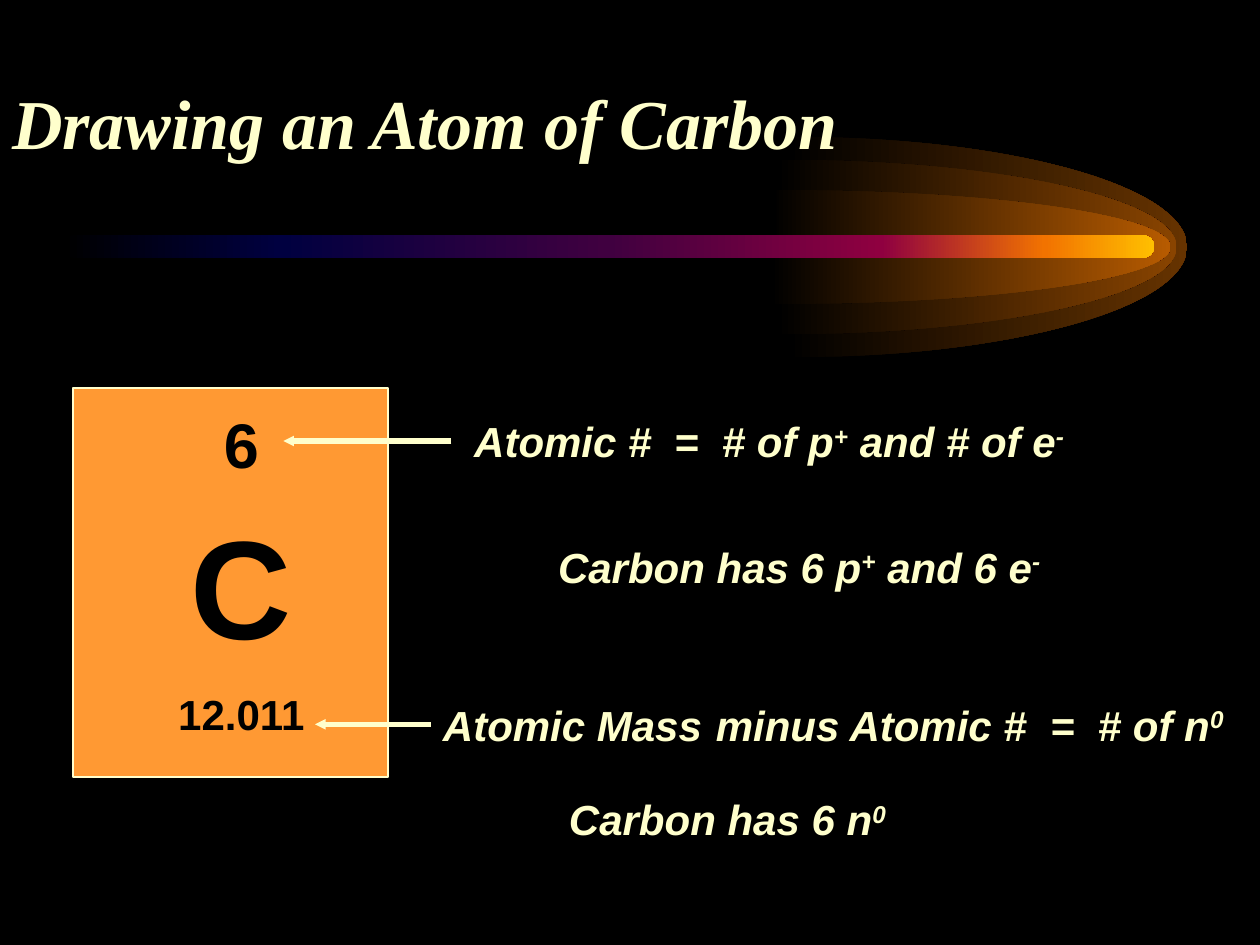
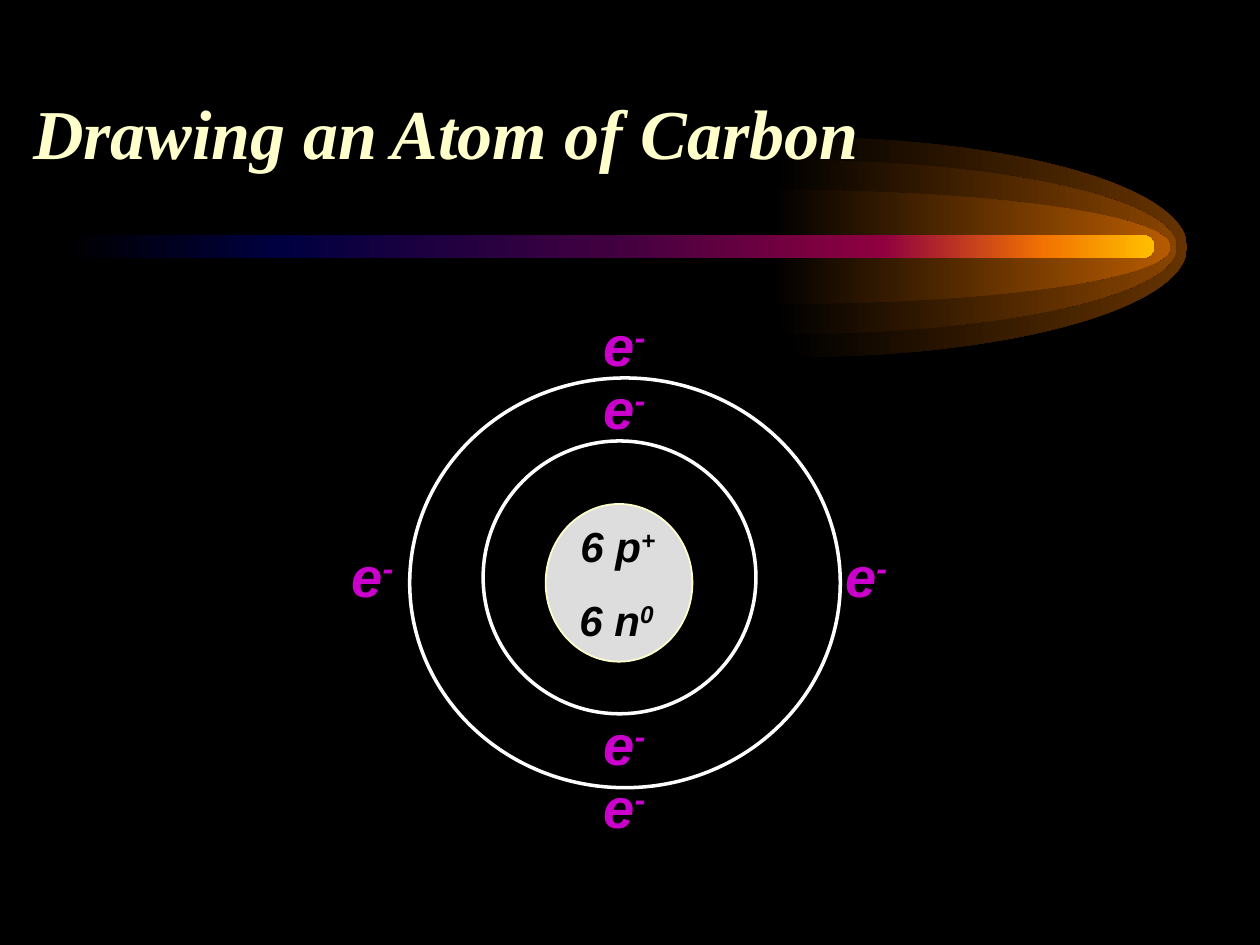
from dataclasses import dataclass

from lxml.etree import SubElement
from pptx import Presentation
from pptx.dml.color import RGBColor
from pptx.enum.shapes import MSO_CONNECTOR, MSO_SHAPE
from pptx.enum.text import MSO_AUTO_SIZE, PP_ALIGN
from pptx.oxml.ns import qn
from pptx.util import Cm, Pt


@dataclass(frozen=True)
class Theme:
    background: str = "000000"
    cream: str = "FFFFCC"
    ink: str = "000000"
    tile: str = "FF9933"
    nucleus: str = "DDDDDD"
    orbit: str = "FFFFFF"
    electron: str = "CC00CC"
    glows: tuple = ("663300", "894400", "B75B00")
    tail_stops: tuple = ((0, "000000"), (20, "000040"), (50, "400040"),
                         (75, "8F0040"), (90, "F27300"), (100, "FFBF00"))
    title_font: str = "Times New Roman"
    body_font: str = "Arial"
    title_size: int = 40
    body_size: int = 24
    electron_size: int = 32
    number_size: int = 36
    symbol_size: int = 80


@dataclass(frozen=True)
class Span:
    text: str
    raised: bool = False


PLUS, MINUS, ZERO = (Span(sign, raised=True) for sign in "+-0")


class SlideBuilder:
    def __init__(self, deck, theme):
        self.deck = deck
        self.theme = theme
        self.page = None

    def start_page(self, title, left, top):
        self.page = self.deck.slides.add_slide(self.deck.slide_layouts[6])
        fill = self.page.background.fill
        fill.solid()
        fill.fore_color.rgb = RGBColor.from_string(self.theme.background)
        self.comet()
        self.text(left, top, 17.58, 1.96, [[Span(title)]],
                  size=self.theme.title_size, font=self.theme.title_font)

    def comet(self):
        """Three nested half-ellipse glows with a glowing tail across them."""
        centers = (15.98, 15.77, 15.65)
        heights = (2.22, 1.76, 1.15)
        for center, height, color in zip(centers, heights, self.theme.glows):
            self.glow(center, 4.98, 7.95, height, color)
        tail = self.page.shapes.add_shape(
            MSO_SHAPE.ROUNDED_RECTANGLE, Cm(1.27), Cm(4.74), Cm(22), Cm(0.46))
        tail.adjustments[0] = 0.5
        self.gradient(tail, self.theme.tail_stops)

    def glow(self, center, middle, width, height, color):
        """Right half of an ellipse: two quarter curves, then back to the centre."""
        bend = 0.55
        right, top, bottom = center + width, middle - height, middle + height
        outline = [
            (center + bend * width, top), (right, middle - bend * height), (right, middle),
            (right, middle + bend * height), (center + bend * width, bottom), (center, bottom),
            (center - 0.12, bottom), (center, middle)]
        builder = self.page.shapes.build_freeform(Cm(center), Cm(top))
        builder.add_line_segments([(Cm(x), Cm(y)) for x, y in outline], close=True)
        shape = builder.convert_to_shape()
        self.curve(shape, 2)
        self.gradient(shape, ((0, self.theme.background), (100, color)))

    def curve(self, shape, count):
        """Turn the first lines of an outline, three at a time, into Bézier curves."""
        lines = list(shape._element.iter(qn("a:lnTo")))
        for index in range(count):
            triple = lines[3 * index:3 * index + 3]
            triple[0].tag = qn("a:cubicBezTo")
            for line in triple[1:]:
                triple[0].append(line[0])
                line.getparent().remove(line)

    def gradient(self, shape, stops):
        """Fill a borderless shape from left to right."""
        shape.shadow.inherit = False
        shape.line.fill.background()
        shape.fill.gradient()
        shape.fill.gradient_angle = 0
        stop_list = shape._element.spPr.find(qn("a:gradFill")).find(qn("a:gsLst"))
        for old_stop in list(stop_list):
            stop_list.remove(old_stop)
        for percent, color in stops:
            stop = SubElement(stop_list, qn("a:gs"), pos=str(percent * 1000))
            SubElement(stop, qn("a:srgbClr"), val=color)

    def shape(self, kind, left, top, width, height, line, weight, fill=None):
        shape = self.page.shapes.add_shape(
            kind, Cm(left), Cm(top), Cm(width), Cm(height))
        shape.shadow.inherit = False
        shape.line.color.rgb = RGBColor.from_string(line)
        shape.line.width = Pt(weight)
        if fill:
            shape.fill.solid()
            shape.fill.fore_color.rgb = RGBColor.from_string(fill)
        else:
            shape.fill.background()

    def arrow(self, start, end, level):
        line = self.page.shapes.add_connector(
            MSO_CONNECTOR.STRAIGHT, Cm(start), Cm(level), Cm(end), Cm(level))
        line.line.color.rgb = RGBColor.from_string(self.theme.cream)
        line.line.width = Pt(3)
        SubElement(line.line._get_or_add_ln(), qn("a:tailEnd"),
                   type="triangle", w="sm", len="sm")
        SubElement(line._element.spPr, qn("a:effectLst"))

    def text(self, left, top, width, height, paragraphs, size=None, color=None,
             font=None, italic=True, align=PP_ALIGN.LEFT, wrap=True):
        frame = self.page.shapes.add_textbox(
            Cm(left), Cm(top), Cm(width), Cm(height)).text_frame
        frame.word_wrap = wrap
        frame.auto_size = MSO_AUTO_SIZE.SHAPE_TO_FIT_TEXT
        for index, spans in enumerate(paragraphs):
            para = frame.add_paragraph() if index else frame.paragraphs[0]
            para.alignment = align
            for span in spans:
                run = para.add_run()
                run.text = span.text
                run.font.name = font or self.theme.body_font
                run.font.size = Pt(size or self.theme.body_size)
                run.font.bold = True
                run.font.italic = italic
                run.font.color.rgb = RGBColor.from_string(color or self.theme.cream)
                if span.raised:
                    run.font._element.set("baseline", "30000")
        return frame

    def label(self, left, top, width, *spans, **style):
        self.text(left, top, width, 1.27, [spans], **style)

    def electron(self, left, top):
        self.text(left, top, 1.9, 1.59, [[Span("e"), MINUS]],
                  size=self.theme.electron_size, color=self.theme.electron,
                  align=PP_ALIGN.CENTER)

    def element_tile(self, number, symbol, mass):
        theme = self.theme
        style = dict(color=theme.ink, italic=False, align=PP_ALIGN.CENTER)
        self.shape(MSO_SHAPE.RECTANGLE, 1.48, 7.83, 6.35, 7.83,
                   theme.cream, 1, theme.tile)
        frame = self.text(2.96, 9.95, 3.81, 5.16, [[Span(symbol)], [Span(mass)]],
                          **style)
        frame.paragraphs[0].runs[0].font.size = Pt(theme.symbol_size)
        frame.paragraphs[1].space_before = Pt(theme.body_size / 2)
        self.text(2.96, 8.05, 3.81, 1.78, [[Span(number)]],
                  size=theme.number_size, **style)


def add_reading_page(slides, title):
    slides.start_page(title, 0, 1.47)
    slides.element_tile("6", "C", "12.011")

    number_top, mass_top = 8.26, 13.97
    slides.label(8.68, mass_top, 5.93, Span("Atomic Mass"))
    slides.arrow(8.68, 6.35, 14.6)
    slides.label(9.31, number_top, 4.23, Span("Atomic #"))
    slides.arrow(9.1, 5.71, 8.89)

    slides.label(14.18, mass_top, 11.22, Span("minus Atomic #  =  # of n"), ZERO)
    slides.label(13.34, number_top, 9.31, Span("=  # of p"), PLUS,
                 Span(" and # of e"), MINUS)
    slides.label(11, 10.79, 11.64, Span("Carbon has 6 p"), PLUS,
                 Span(" and 6 e"), MINUS)
    slides.label(11.22, 15.88, 7.41, Span("Carbon has 6 n"), ZERO)


def add_model_page(slides, title):
    theme = slides.theme
    slides.start_page(title, 0.42, 1.69)

    slides.shape(MSO_SHAPE.OVAL, 11, 10.16, 2.96, 3.18, theme.cream, 1, theme.nucleus)
    slides.label(11.45, 10.37, 2.06, Span("6 p"), PLUS, color=theme.ink, wrap=False)
    slides.label(11.43, 11.86, 2.06, Span("6 n"), ZERO, color=theme.ink, wrap=False)

    slides.shape(MSO_SHAPE.OVAL, 9.74, 8.89, 5.5, 5.5, theme.orbit, 2)
    slides.shape(MSO_SHAPE.OVAL, 8.26, 7.62, 8.68, 8.26, theme.orbit, 2)
    for top in (6.14, 7.41, 14.18, 15.45):
        slides.electron(11.64, top)
    for left in (6.56, 16.51):
        slides.electron(left, 10.79)


def main():
    deck = Presentation()
    deck.slide_width, deck.slide_height = Cm(25.4), Cm(19.05)
    slides = SlideBuilder(deck, Theme())
    title = "Drawing an Atom of Carbon"
    add_reading_page(slides, title)
    add_model_page(slides, title)
    deck.save("out.pptx")


if __name__ == "__main__":
    main()
